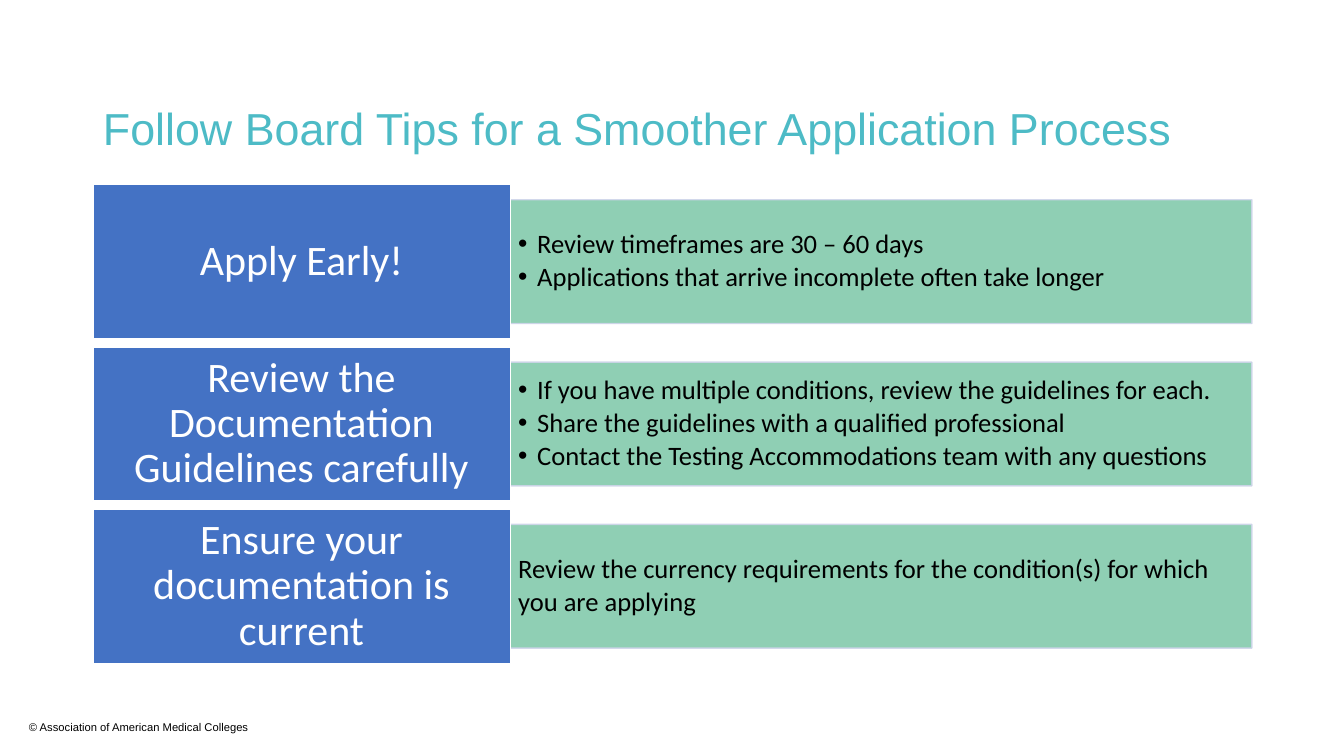
from lxml.etree import SubElement
from pptx import Presentation
from pptx.dml.color import RGBColor
from pptx.enum.shapes import MSO_SHAPE as Shape
from pptx.enum.text import MSO_ANCHOR as Anchor, MSO_AUTO_SIZE as AutoSize, PP_ALIGN as Align
from pptx.oxml.ns import qn
from pptx.util import Cm, Pt

# Content
TITLE = "Follow Board Tips for a Smoother Application Process"
COPYRIGHT = "© Association of American Medical Colleges"
TIPS = [  # label, details, bulleted
    ("Apply Early!",
     ["Review timeframes are 30 – 60 days",
      "Applications that arrive incomplete often take longer"], True),
    ("Review the Documentation Guidelines carefully",
     ["If you have multiple conditions, review the guidelines for each.",
      "Share the guidelines with a qualified professional",
      "Contact the Testing Accommodations team with any questions"], True),
    ("Ensure your documentation is current",
     ["Review the currency requirements for the condition(s) for which",
      "you are applying"], False),
]

# Look
COLORS = {"title": "4DBBC6", "label": "4472C4", "panel": "83CAAC",
          "panel_line": "CFD5EA", "white": "FFFFFF", "black": "000000"}
FONTS = {
    "title": {"name": "Arial", "size": Pt(32), "color": "title"},
    "copyright": {"name": "Arial", "size": Pt(8), "color": "black"},
    "label": {"name": "Calibri", "size": Pt(30), "color": "white"},
    "detail": {"name": "Calibri", "size": Pt(19), "color": "black"},
}
PARAS = {
    "title": {"alignment": Align.LEFT, "line_spacing": 0.9},
    "copyright": {"alignment": Align.LEFT},
    "label": {"alignment": Align.CENTER, "line_spacing": 0.9, "space_after": Pt(10.5)},
    "detail": {"alignment": Align.LEFT, "line_spacing": 0.9, "space_after": Pt(2.85)},
}

# Layout, in centimetres
LEFT, TOP, PITCH = 2.34, 4.65, 4.09
LABEL_W, LABEL_H = 10.52, 3.89
PANEL_W, PANEL_H = 18.69, 3.12
BULLET_INDENT = Cm(0.48)


def rgb(key):
    return RGBColor.from_string(COLORS[key])


def add_bullet(para):
    props = para._p.get_or_add_pPr()
    props.set("marL", str(BULLET_INDENT))
    props.set("indent", str(-BULLET_INDENT))
    SubElement(props, qn("a:buFont"), typeface="Arial")
    SubElement(props, qn("a:buChar"), char="•")


def write(frame, lines, style, bulleted=False):
    frame.word_wrap = True
    frame.auto_size = AutoSize.NONE
    for index, line in enumerate(lines):
        para = frame.add_paragraph() if index else frame.paragraphs[0]
        for name, value in PARAS[style].items():
            setattr(para, name, value)
        if bulleted:
            add_bullet(para)
        span = para.add_run()
        span.text = line
        for name, value in FONTS[style].items():
            if name == "color":
                span.font.color.rgb = rgb(value)
            else:
                setattr(span.font, name, value)


def add_block(page, place, fill, line, margins):
    box = page.shapes.add_shape(Shape.RECTANGLE, *map(Cm, place))
    box.shadow.inherit = False
    box.fill.solid()
    box.fill.fore_color.rgb = rgb(fill)
    box.line.color.rgb = rgb(line)
    box.line.width = Pt(1)
    frame = box.text_frame
    frame.vertical_anchor = Anchor.MIDDLE
    frame.margin_left = frame.margin_right = Cm(margins[0])
    frame.margin_top = frame.margin_bottom = Cm(margins[1])
    return box


def main():
    deck = Presentation()
    deck.slide_width, deck.slide_height = Cm(33.87), Cm(19.05)
    page = deck.slides.add_slide(deck.slide_layouts[5])

    # Copyright line
    box = page.shapes.add_textbox(Cm(0.48), Cm(18.03), Cm(13.64), Cm(0.61))
    write(box.text_frame, [COPYRIGHT], "copyright")

    # Title
    title = page.shapes.title
    title.left, title.top, title.width, title.height = map(Cm, (LEFT, 1.45, 29.21, 3.68))
    title.text_frame.vertical_anchor = Anchor.MIDDLE
    write(title.text_frame, [TITLE], "title")

    # Tips: a detail panel centred beside each label
    for row, (label, details, bulleted) in enumerate(TIPS):
        top = TOP + row * PITCH
        panel = add_block(page, (LEFT + LABEL_W, top + (LABEL_H - PANEL_H) / 2, PANEL_W, PANEL_H),
                          "panel", "panel_line", (0.2, 0.1))
        for color in panel._element.spPr.iter(qn("a:srgbClr")):
            SubElement(color, qn("a:alpha"), val="90000")
        write(panel.text_frame, details, "detail", bulleted)
        block = add_block(page, (LEFT, top, LABEL_W, LABEL_H), "label", "white", (0.3, 0.15))
        write(block.text_frame, [label], "label")

    deck.save("out.pptx")


if __name__ == "__main__":
    main()
